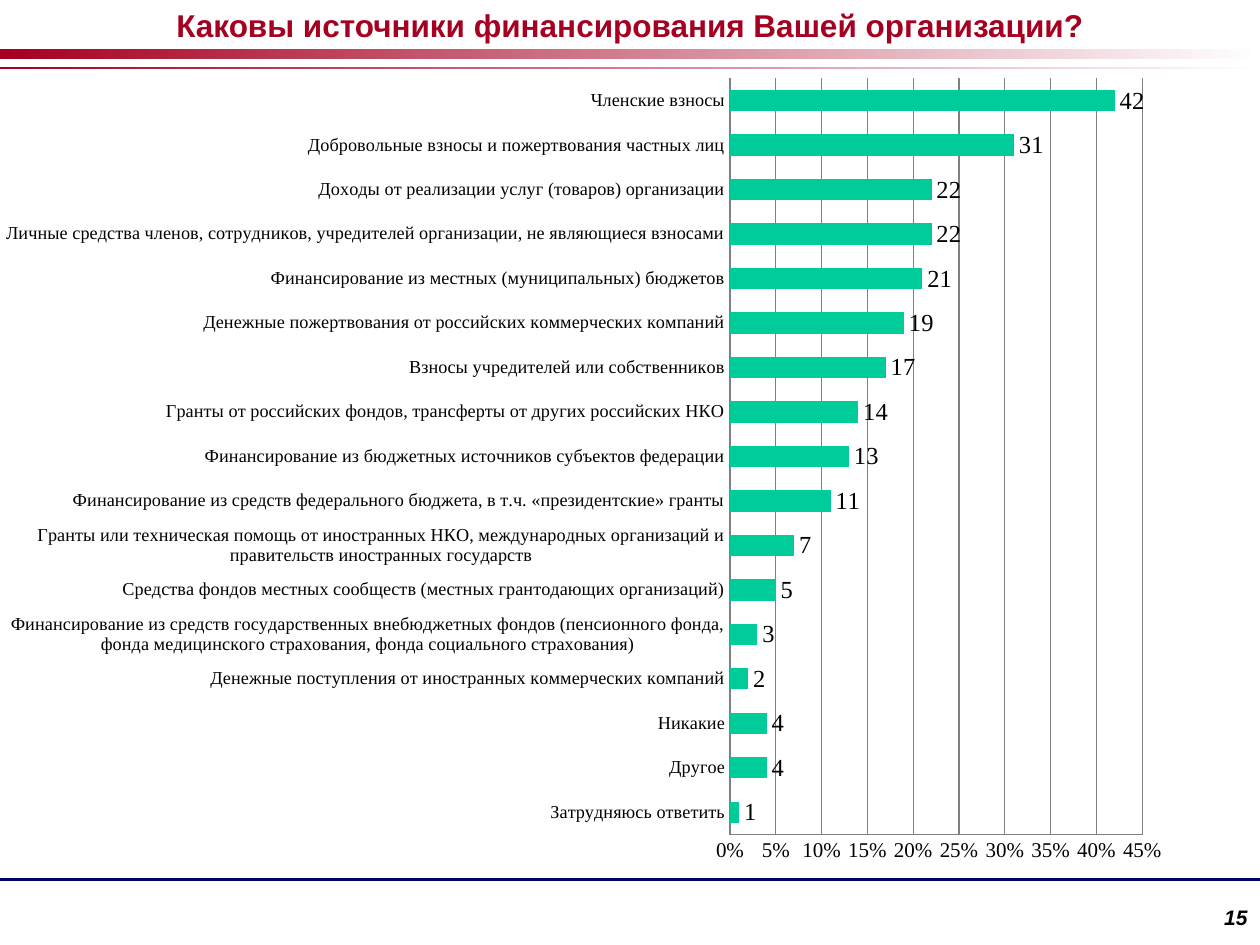
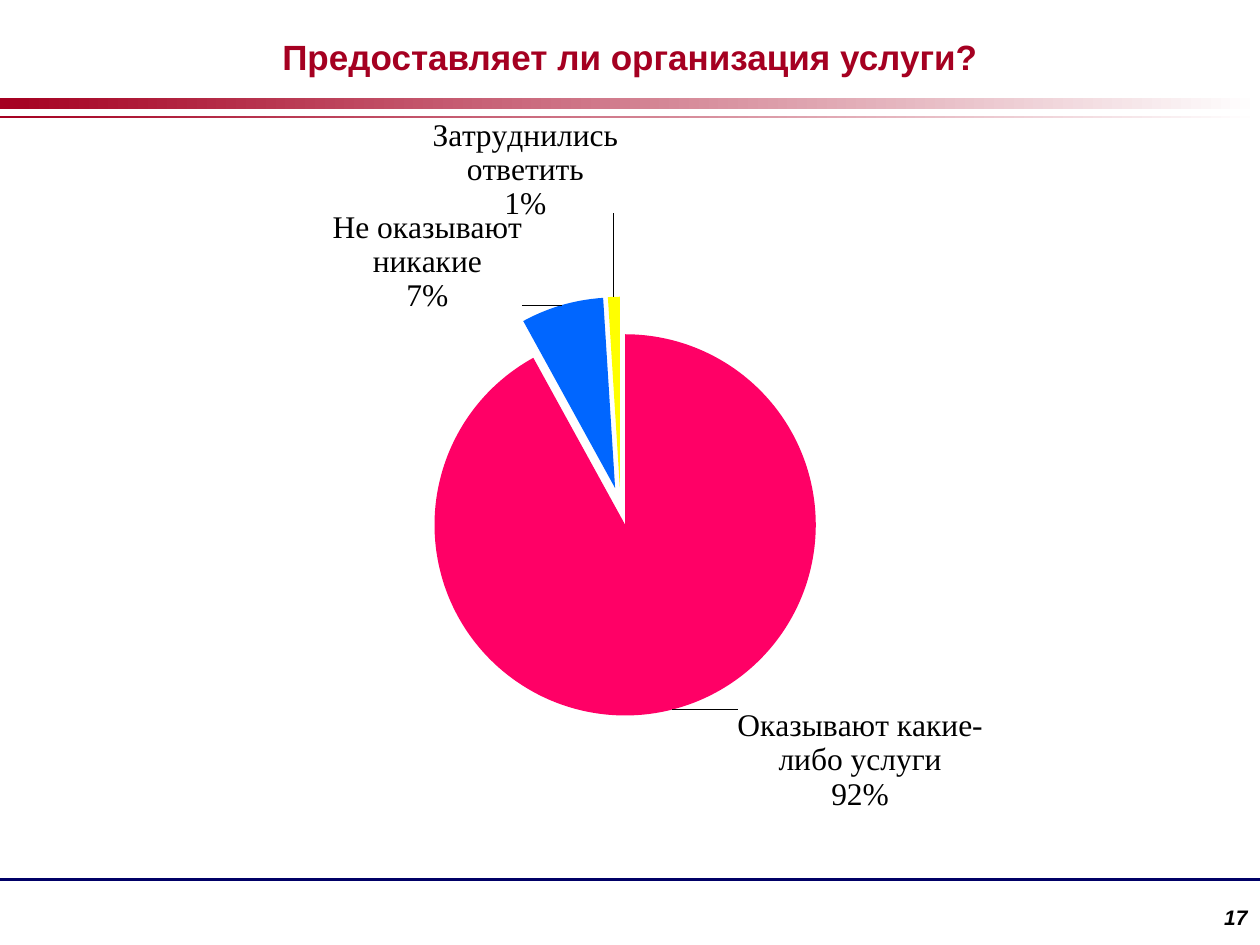
from lxml import etree
from pptx import Presentation
from pptx.chart.data import CategoryChartData
from pptx.dml.color import RGBColor
from pptx.enum.chart import XL_CHART_TYPE as CT, XL_LABEL_POSITION as LP, XL_TICK_MARK as TM
from pptx.enum.shapes import MSO_CONNECTOR, MSO_SHAPE
from pptx.enum.text import MSO_ANCHOR, PP_ALIGN
from pptx.oxml.ns import qn
from pptx.util import Cm, Pt

COLORS = {
    "crimson": "A50021", "white": "FFFFFF", "navy": "000066", "black": "000000",
    "grid": "808080", "bar": "00CC99",
    "pink": "FF0066", "blue": "0066FF", "yellow": "FFFF00",
}
HEAD_FONT, CHART_FONT = "Arial", "Times New Roman"
WIDTH, HEIGHT = 25.4, 19.05

FUNDING = [
    ("Затрудняюсь ответить", 1),
    ("Другое", 4),
    ("Никакие", 4),
    ("Денежные поступления от иностранных коммерческих компаний", 2),
    ("Финансирование из средств государственных внебюджетных фондов (пенсионного фонда, "
     "фонда медицинского страхования, фонда социального страхования)", 3),
    ("Средства фондов местных сообществ (местных грантодающих организаций)", 5),
    ("Гранты или техническая помощь от иностранных НКО, международных организаций и "
     "правительств иностранных государств", 7),
    ("Финансирование из средств федерального бюджета, в т.ч. «президентские» гранты", 11),
    ("Финансирование из бюджетных источников субъектов федерации", 13),
    ("Гранты от российских фондов, трансферты от других российских НКО", 14),
    ("Взносы учредителей или собственников", 17),
    ("Денежные пожертвования от российских коммерческих компаний", 19),
    ("Финансирование из местных (муниципальных) бюджетов", 21),
    ("Личные средства членов, сотрудников, учредителей организации, "
     "не являющиеся взносами", 22),
    ("Доходы от реализации услуг (товаров) организации", 22),
    ("Добровольные взносы и пожертвования частных лиц", 31),
    ("Членские взносы", 42),
]
# Answer, percent, slice colour, label shift as fractions of the chart
SERVICES = [
    ("Оказывают какие-либо услуги", 92, "pink", (0.05, -0.01)),
    ("Не оказывают никакие", 7, "blue", (-0.03, 0.02)),
    ("Затруднились ответить", 1, "yellow", (-0.07, -0.1)),
]


def rgb(name):
    return RGBColor.from_string(COLORS[name])


def manual_layout(**values):
    """Chart layout element; the children keep the given order."""
    layout = etree.Element(qn("c:layout"))
    manual = etree.SubElement(layout, qn("c:manualLayout"))
    for tag, value in values.items():
        etree.SubElement(manual, qn(f"c:{tag}")).set("val", str(value))
    return layout


class Deck:
    def __init__(self):
        self.prs = Presentation()
        self.prs.slide_width, self.prs.slide_height = Cm(WIDTH), Cm(HEIGHT)
        self.s = None

    def slide(self, title, size, top, height, band_top, number):
        self.s = self.prs.slides.add_slide(self.prs.slide_layouts[5])
        self.title(title, size, top, height)
        self.rule(17.73)
        self.bands(band_top)
        self.page_number(number)

    def style(self, font, size, color="black", name=CHART_FONT, bold=False, italic=False):
        font.name, font.size, font.bold, font.italic = name, Pt(size), bold, italic
        font.color.rgb = rgb(color)

    def text(self, tf, text, align, size, color, italic=False):
        tf.word_wrap = True
        tf.vertical_anchor = MSO_ANCHOR.TOP
        p = tf.paragraphs[0]
        p.alignment = align
        r = p.add_run()
        r.text = text
        self.style(r.font, size, color, HEAD_FONT, True, italic)

    def title(self, text, size, top, height):
        sp = self.s.shapes.title
        sp.left, sp.top, sp.width, sp.height = Cm(0), Cm(top), Cm(WIDTH), Cm(height)
        self.text(sp.text_frame, text, PP_ALIGN.CENTER, size, "crimson")

    def rule(self, y):
        line = self.s.shapes.add_connector(MSO_CONNECTOR.STRAIGHT, Cm(0), Cm(y), Cm(WIDTH), Cm(y))
        line.line.color.rgb, line.line.width = rgb("navy"), Pt(2.25)
        etree.SubElement(line._element.spPr, qn("a:effectLst"))

    def bands(self, top):
        group = self.s.shapes.add_group_shape()
        for y, height in ((top, 0.21), (top + 0.36, 0.05)):
            sp = group.shapes.add_shape(MSO_SHAPE.RECTANGLE, Cm(0), Cm(y), Cm(WIDTH), Cm(height))
            sp.shadow.inherit = False
            sp.line.fill.background()
            sp.fill.gradient()
            sp.fill.gradient_angle = 0
            for stop, color in zip(sp.fill.gradient_stops, ("crimson", "white")):
                stop.color.rgb = rgb(color)

    def page_number(self, number):
        box = self.s.shapes.add_textbox(Cm(8.71), Cm(18.11), Cm(16.69), Cm(0.91))
        self.text(box.text_frame, str(number), PP_ALIGN.RIGHT, 12, "black", italic=True)

    def chart(self, kind, rows, box, plot):
        data = CategoryChartData()
        data.categories = [row[0] for row in rows]
        data.add_series("Series 1", [row[1] for row in rows])
        chart = self.s.shapes.add_chart(kind, *map(Cm, box), data).chart
        chart.has_legend = chart.has_title = False
        self.style(chart.font, 10)
        area = chart._chartSpace.find(f".//{qn('c:plotArea')}")
        for old in area.findall(qn("c:layout")):
            area.remove(old)
        x, y, w, h = plot
        area.insert(0, manual_layout(layoutTarget="inner", xMode="edge", yMode="edge",
                                     x=x, y=y, w=w, h=h))
        return chart

    def bar_chart(self, rows, box, plot):
        chart = self.chart(CT.BAR_CLUSTERED, rows, box, plot)
        bars = chart.plots[0]
        bars.gap_width, bars.vary_by_categories = 108, False
        series = bars.series[0]
        series.format.fill.solid()
        series.format.fill.fore_color.rgb = rgb("bar")
        labels = series.data_labels
        labels.show_value, labels.position = True, LP.OUTSIDE_END
        labels.number_format, labels.number_format_is_linked = "#,##0", False
        self.style(labels.font, 14)
        # Axes
        for axis, size in ((chart.category_axis, 10.4), (chart.value_axis, 12)):
            axis.major_tick_mark = axis.minor_tick_mark = TM.NONE
            axis.format.line.color.rgb = rgb("grid")
            self.style(axis.tick_labels.font, size)
        axis = chart.value_axis
        axis.minimum_scale, axis.maximum_scale, axis.major_unit = 0, 45, 5
        axis.has_major_gridlines = True
        axis.major_gridlines.format.line.color.rgb = rgb("grid")
        axis.tick_labels.number_format = "#,##0\\%"
        axis.tick_labels.number_format_is_linked = False

    def pie_chart(self, rows, box, plot, explosion):
        chart = self.chart(CT.PIE, rows, box, plot)
        chart.plots[0].vary_by_categories = True
        series = chart.plots[0].series[0]
        labels = series.data_labels
        labels.show_value, labels.show_category_name, labels.show_percentage = False, True, True
        labels.number_format, labels.number_format_is_linked = "0%", False
        labels.position = LP.OUTSIDE_END
        self.style(labels.font, 18)
        for i, (_, _, color, _) in enumerate(rows):
            point = series.points[i]
            point.format.fill.solid()
            point.format.fill.fore_color.rgb = rgb(color)
            self.style(point.data_label.font, 18)
            point.data_label.position = LP.OUTSIDE_END
        # Slices pulled apart
        ser = series._element
        explode = etree.Element(qn("c:explosion"))
        explode.set("val", str(explosion))
        ser.find(qn("c:dPt")).addprevious(explode)
        # Shifted two-part labels
        for label, (_, _, _, (x, y)) in zip(ser.iter(qn("c:dLbl")), rows):
            label.find(qn("c:idx")).addnext(manual_layout(x=x, y=y))
            for tag, shown in (("showVal", 0), ("showCatName", 1), ("showPercent", 1)):
                label.find(qn(f"c:{tag}")).set("val", str(shown))
            etree.SubElement(label, qn("c:separator")).text = "\n"
        dlbls = ser.find(qn("c:dLbls"))
        for leader in dlbls.findall(qn("c:showLeaderLines")):
            dlbls.remove(leader)
        etree.SubElement(dlbls, qn("c:separator")).text = "\n"
        etree.SubElement(dlbls, qn("c:showLeaderLines")).set("val", "1")


def main():
    deck = Deck()

    # Sources of funding
    deck.slide("Каковы источники финансирования Вашей организации?", 18, 0, 1.02, 0.99, 15)
    deck.bar_chart(FUNDING, (0, 1.19, 29.79, 16.94), (0.494, 0.023, 0.279, 0.9))

    # Services
    deck.slide("Предоставляет ли организация услуги?", 20, 0.58, 1.12, 1.98, 17)
    deck.pie_chart(SERVICES, (0, 2.39, 25.4, 15.29), (0.204, 0.235, 0.577, 0.553), 10)

    deck.prs.save("out.pptx")


if __name__ == "__main__":
    main()
